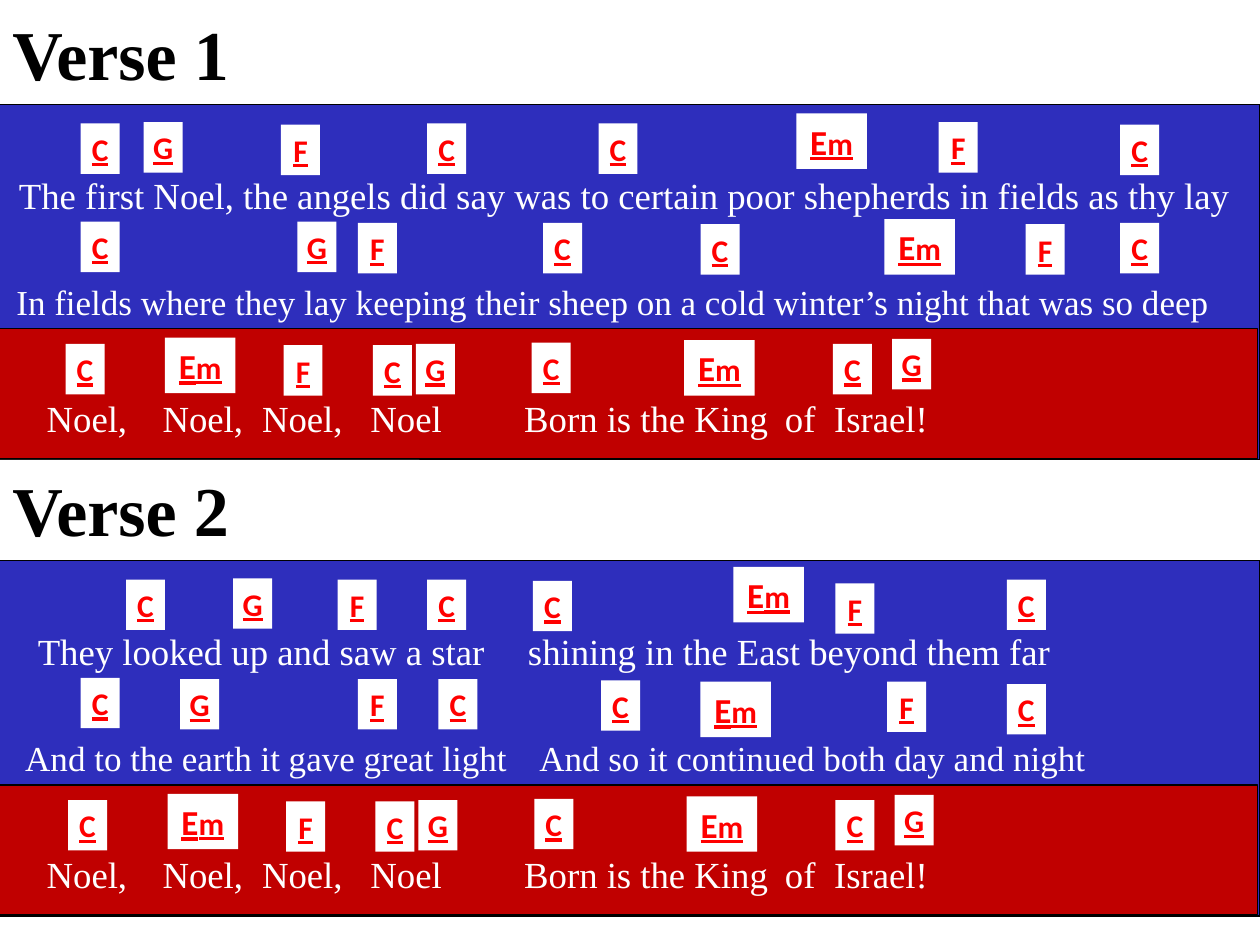
from lxml import etree
from pptx import Presentation
from pptx.dml.color import RGBColor
from pptx.enum.shapes import MSO_SHAPE
from pptx.enum.text import MSO_ANCHOR, PP_ALIGN
from pptx.oxml.ns import qn
from pptx.util import Inches, Pt

RECT = MSO_SHAPE.RECTANGLE
MIDDLE, TOP = MSO_ANCHOR.MIDDLE, MSO_ANCHOR.TOP
LEFT, CENTER = PP_ALIGN.LEFT, PP_ALIGN.CENTER
COLORS = {"verse": "2E2EBC", "refrain": "C00000", "paper": "FFFFFF",
          "ink": "000000", "chord": "FF0000"}
SERIF, SANS = "Times New Roman", "Calibri"

# Content: lyric phrases as (x, text), chords as (name, x, nudge down)
REFRAIN_PHRASES = [(0.37, "Noel,"), (1.29, "Noel,"), (2.08, "Noel,"), (2.94, "Noel"),
                   (4.16, "Born is the King"), (6.23, "of"), (6.62, "Israel!")]
REFRAIN_CHORDS = [("C", 0.52, 0), ("Em", 1.31, -0.05), ("F", 2.25, 0.01),
                  ("C", 2.96, 0.01), ("G", 3.30, 0), ("C", 4.22, -0.01),
                  ("Em", 5.43, -0.03), ("C", 6.61, 0), ("G", 7.08, -0.04)]
VERSES = [
    {"title": "Verse 1", "refrain_shift": 0, "lines": [
        ([(0.15, "The first Noel, the angels did say was to certain poor shepherds "
                 "in fields as thy lay")],
         [("C", 0.64, 0), ("G", 1.14, -0.01), ("F", 2.23, 0.01), ("C", 3.39, 0),
          ("C", 4.75, 0), ("Em", 6.32, -0.08), ("F", 7.45, -0.01), ("C", 8.89, 0.01)]),
        ([(0.13, "In fields where they lay keeping their sheep on a cold winter’s "
                 "night that was so deep")],
         [("C", 0.64, -0.01), ("G", 2.36, -0.01), ("F", 2.84, 0), ("C", 4.31, 0),
          ("C", 5.56, 0.01), ("Em", 7.02, -0.03), ("F", 8.14, 0.01), ("C", 8.89, 0)]),
    ]},
    {"title": "Verse 2", "refrain_shift": 0.02, "lines": [
        ([(0.30, "They looked up and saw a star"),
          (4.19, "shining in the East beyond them far")],
         [("C", 1.00, 0), ("G", 1.85, -0.01), ("F", 2.68, 0), ("C", 3.39, 0),
          ("C", 4.23, 0.01), ("Em", 5.82, -0.10), ("F", 6.63, 0.03), ("C", 7.99, 0)]),
        ([(0.20, "And to the earth it gave great light"),
          (4.28, "And so it continued both day and night")],
         [("C", 0.64, -0.01), ("G", 1.43, 0), ("F", 2.84, 0), ("C", 3.48, 0),
          ("C", 4.77, 0.01), ("Em", 5.56, 0.02), ("F", 7.04, 0.02), ("C", 7.99, 0.04)]),
    ]},
]

# Layout in inches; row offsets are measured from the top of a verse
VERSE_TOP, VERSE_PITCH = 0.03, 3.62
TITLE_SIZE = (3.33, 0.77)
BAND_WIDTH = 10.02
VERSE_BAND = (-0.02, 0.80, 2.82)
REFRAIN_BAND = (-0.04, 2.58, 1.03)
ROWS = [  # lyric left, lyric offset, lyric height, point size, chord offset
    (-0.02, 1.29, 0.45, 21, 0.95),
    (-0.04, 2.15, 0.44, 20, 1.74),
    (0.05, 3.06, 0.45, 21, 2.70),
]
CHORD_SIZES = {1: (0.31, 0.40), 2: (0.56, 0.44)}  # by number of letters

prs = Presentation()
prs.slide_width, prs.slide_height = Inches(10), Inches(7.5)
slide = prs.slides.add_slide(prs.slide_layouts[6])


def add_block(x, y, width, height, fill, outlined=False):
    block = slide.shapes.add_shape(
        RECT, Inches(x), Inches(y), Inches(width), Inches(height))
    block.shadow.inherit = False
    block.fill.solid()
    block.fill.fore_color.rgb = RGBColor.from_string(COLORS[fill])
    if outlined:
        block.line.color.rgb = RGBColor.from_string(COLORS["ink"])
        block.line.width = Pt(0.75)
    else:
        block.line.fill.background()
    return block


def add_run(paragraph, text, size, font_name, color, bold=False, underline=False):
    run = paragraph.add_run()
    run.text = text
    font = run.font
    font.size, font.name = Pt(size), font_name
    font.bold, font.underline = bold, underline
    font.color.rgb = RGBColor.from_string(COLORS[color])


def open_paragraph(shape, align, anchor, wrap):
    frame = shape.text_frame
    frame.word_wrap, frame.vertical_anchor = wrap, anchor
    paragraph = frame.paragraphs[0]
    paragraph.alignment = align
    return paragraph


def add_lyric(phrases, left, y, height, size):
    start = phrases[0][0]
    lyric = slide.shapes.add_textbox(
        Inches(left), Inches(y), Inches(BAND_WIDTH), Inches(height))
    lyric.text_frame.margin_left = Inches(start - left)
    lyric.text_frame.margin_right = 0
    paragraph = open_paragraph(lyric, LEFT, TOP, True)
    # Tab stops place every phrase after the first
    if len(phrases) > 1:
        stops = etree.SubElement(paragraph._p.get_or_add_pPr(), qn("a:tabLst"))
        for x, _ in phrases[1:]:
            etree.SubElement(stops, qn("a:tab"), pos=str(Inches(x - start)), algn="l")
    add_run(paragraph, "\t".join(text for _, text in phrases), size, SERIF, "paper")


def add_chord(name, x, y):
    chord = add_block(x, y, *CHORD_SIZES[len(name)], "paper")
    paragraph = open_paragraph(chord, CENTER, MIDDLE, False)
    letter_sizes = (18,) if len(name) == 1 else (20, 18)
    for letter, size in zip(name, letter_sizes):
        add_run(paragraph, letter, size, SANS, "chord", bold=True, underline=True)


for index, verse in enumerate(VERSES):
    top = VERSE_TOP + index * VERSE_PITCH

    # Coloured bands
    for fill, (left, offset, height) in (("verse", VERSE_BAND), ("refrain", REFRAIN_BAND)):
        add_block(left, top + offset, BAND_WIDTH, height, fill, outlined=True)

    # Lyrics with their chords, refrain last
    shift = verse["refrain_shift"]
    refrain = (REFRAIN_PHRASES, [(name, x + shift, dy) for name, x, dy in REFRAIN_CHORDS])
    for (phrases, chords), row in zip(verse["lines"] + [refrain], ROWS):
        left, offset, height, size, chord_offset = row
        add_lyric(phrases, left, top + offset, height, size)
        for name, x, nudge in chords:
            add_chord(name, x, top + chord_offset + nudge)

    # Verse heading
    heading = add_block(0, top, *TITLE_SIZE, "paper")
    add_run(open_paragraph(heading, LEFT, MIDDLE, True),
            verse["title"], 40, SERIF, "ink", bold=True)

prs.save("out.pptx")
